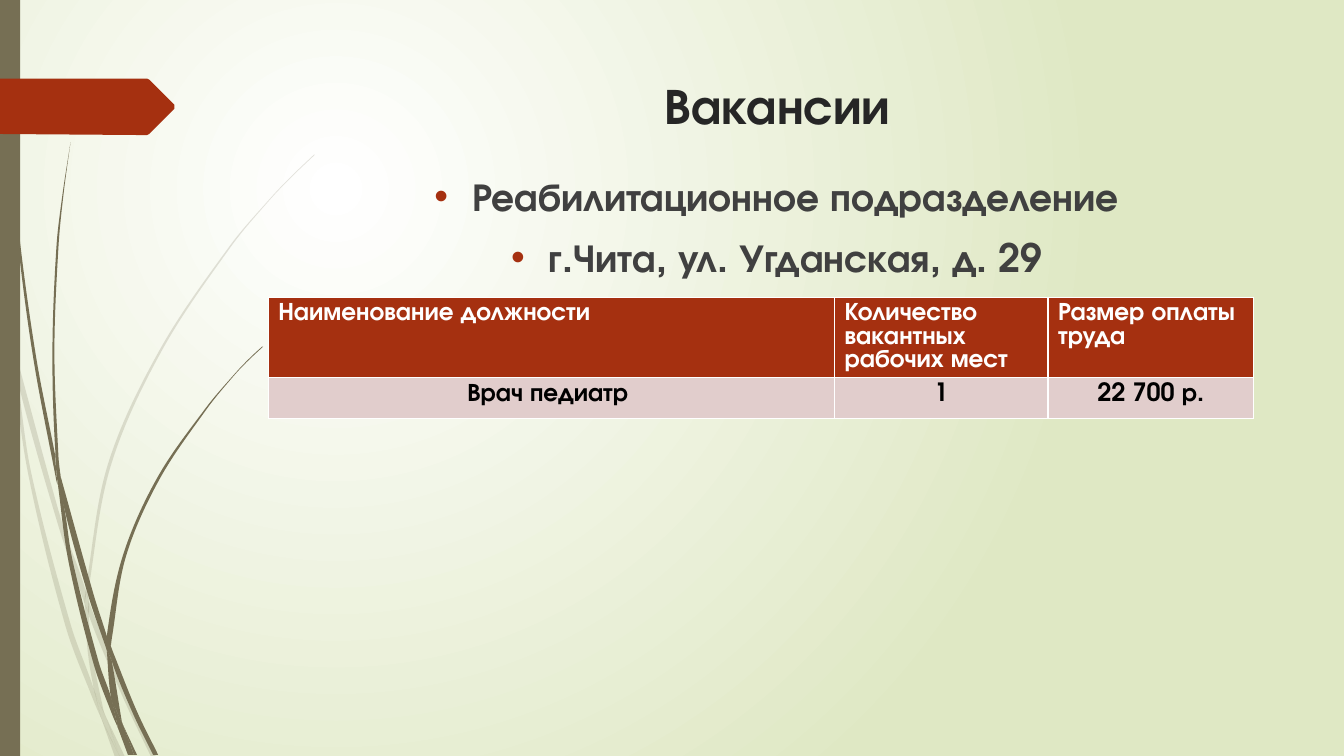
from math import hypot

from pptx import Presentation
from pptx.dml.color import RGBColor
from pptx.enum import shapes, text
from pptx.oxml import parse_xml
from pptx.oxml import ns
from pptx.util import Cm, Pt

FONT = "TeX Gyre Adventor"
COLORS = {
    "white": "FFFFFF", "pale_green": "DFE8C4", "olive": "766F54",
    "rust": "A53010", "title": "262626", "body": "404040",
    "black": "000000", "row": "E1CDCC",
}
STEP = Cm(0.0254)  # unit of the outline coordinates

ARROW = [(173, 108), (148, 133), (146, 134), (136, 134), (0, 133), (0, 78),
         (136, 78), (146, 78), (148, 79), (173, 104)]

# Anchors of the closed, curved outlines that make up the grass
FAINT_GRASS = [
    [(11, 350), (9, 322), (0, 282), (0, 299), (10, 344)],
    [(58, 522), (84, 599), (85, 586), (62, 520), (14, 345), (17, 376)],
    [(92, 607), (88, 596), (88, 610), (123, 694), (150, 751), (155, 751), (127, 692)],
    [(119, 751), (124, 751), (105, 711)],
    [(93, 683), (70, 619), (31, 469), (17, 376), (11, 350), (28, 470), (65, 621),
     (92, 693), (101, 714), (99, 707)],
    [(84, 599), (87, 646), (93, 683), (96, 692), (105, 711), (103, 706), (91, 646),
     (88, 610), (88, 608)],
    [(88, 584), (110, 462), (160, 349), (229, 245), (268, 198), (290, 175), (312, 154),
     (312, 153), (289, 175), (268, 197), (228, 244), (158, 348), (107, 461), (85, 584),
     (85, 586), (88, 596)],
    [(101, 714), (114, 751), (119, 751)],
    [(88, 608), (88, 610), (88, 596), (85, 586), (84, 599)],
    [(96, 692), (93, 683), (99, 707), (101, 714), (119, 751), (105, 711)],
]
DARK_GRASS = [
    [(7, 110), (17, 233), (33, 355), (56, 477), (57, 481), (55, 457), (55, 453),
     (36, 355), (19, 232), (8, 109), (5, 48), (4, 0), (3, 0), (4, 48)],
    [(88, 592), (106, 645), (106, 633), (106, 631), (93, 590), (60, 472), (64, 505)],
    [(113, 649), (110, 641), (111, 656), (132, 708), (152, 749), (157, 749), (136, 706)],
    [(110, 691), (98, 657), (72, 556), (64, 505), (57, 477), (68, 557), (93, 659),
     (111, 708), (117, 722), (116, 717)],
    [(60, 472), (58, 453), (54, 349), (58, 245), (63, 193), (70, 141), (62, 193),
     (56, 245), (52, 349), (55, 449)],
    [(133, 749), (136, 749), (122, 719)],
    [(57, 477), (64, 505), (60, 472), (55, 449), (55, 453)],
    [(111, 633), (125, 552), (158, 476), (205, 406), (231, 374), (245, 359), (261, 344),
     (260, 344), (245, 358), (231, 373), (204, 405), (156, 474), (122, 551), (106, 631),
     (110, 641)],
    [(117, 722), (127, 749), (131, 749)],
    [(106, 645), (110, 691), (116, 706), (122, 719), (121, 716), (111, 656), (109, 651)],
    [(106, 645), (109, 651), (111, 656), (110, 641), (106, 631), (106, 633)],
    [(116, 706), (110, 691), (116, 717), (117, 722), (130, 749), (133, 749), (122, 719)],
]


def rgb(name):
    return RGBColor.from_string(COLORS[name])


def direction(a, b):
    length = hypot(b[0] - a[0], b[1] - a[1])
    return (b[0] - a[0]) / length, (b[1] - a[1]) / length


def tangent(before, at, after, chord):
    """Smooth direction at an anchor, or the chord at a sharp corner."""
    (x1, y1), (x2, y2) = direction(before, at), direction(at, after)
    return direction(before, after) if x1 * x2 + y1 * y2 > 0.7 else chord


def bend(sp):
    """Turn the straight sides of a closed outline into curves."""
    sides = list(sp._element.iter(ns.qn("a:lnTo")))
    start = sp._element.find(".//" + ns.qn("a:moveTo"))
    anchors = [(int(e[0].get("x")), int(e[0].get("y"))) for e in [start] + sides]
    if anchors[-1] == anchors[0]:
        anchors.pop()
    n = len(anchors)
    for i, side in enumerate(sides):
        a, b, c, d = (anchors[(i + k) % n] for k in (-1, 0, 1, 2))
        chord = direction(b, c)
        reach = hypot(c[0] - b[0], c[1] - b[1]) / 3
        out, into = tangent(a, b, c, chord), tangent(b, c, d, chord)
        points = ((b[0] + out[0] * reach, b[1] + out[1] * reach),
                  (c[0] - into[0] * reach, c[1] - into[1] * reach), c)
        pts = "".join(f'<a:pt x="{round(x)}" y="{round(y)}"/>' for x, y in points)
        side.getparent().replace(side, parse_xml(
            f'<a:cubicBezTo {ns.nsdecls("a")}>{pts}</a:cubicBezTo>'))


def paint(sp, color):
    sp.shadow.inherit = False
    sp.fill.solid()
    sp.fill.fore_color.rgb = rgb(color)
    sp.line.fill.background()


def add_outline(s, anchors, color):
    points = [(x * STEP, y * STEP) for x, y in anchors]
    builder = s.shapes.build_freeform(*points[0])
    builder.add_line_segments(points[1:])
    sp = builder.convert_to_shape()
    paint(sp, color)
    return sp


def add_grass(s, outlines, opacity):
    for anchors in outlines:
        sp = add_outline(s, anchors + anchors[:1], "olive")
        bend(sp)
        if opacity < 100:
            color = sp._element.spPr.find(".//" + ns.qn("a:srgbClr"))
            color.append(parse_xml(
                f'<a:alpha {ns.nsdecls("a")} val="{opacity * 1000}"/>'))


def set_background(s):
    fill = s.background.fill
    fill.gradient()
    for stop, color, position in zip(fill.gradient_stops, ("white", "pale_green"), (0, 1)):
        stop.color.rgb = rgb(color)
        stop.position = position
    lin = s.background._cSld.find(".//" + ns.qn("a:lin"))
    lin.getparent().replace(lin, parse_xml(
        f'<a:path {ns.nsdecls("a")} path="circle">'
        '<a:fillToRect l="50000" t="50000" r="100000" b="100000"/></a:path>'))


def style(p, size, color, align):
    p.alignment = align
    p.font.name, p.font.size, p.font.bold = FONT, Pt(size), True
    p.font.color.rgb = rgb(color)


def fill_placeholder(sp, box, lines, size, color):
    sp.left, sp.top, sp.width, sp.height = box
    tf = sp.text_frame
    tf.text = "\n".join(lines)
    tf.word_wrap = True
    tf.auto_size = text.MSO_AUTO_SIZE.NONE
    tf.vertical_anchor = text.MSO_ANCHOR.TOP
    for p in tf.paragraphs:
        style(p, size, color, text.PP_ALIGN.CENTER)
    return tf


def add_bullet(p):
    p.space_before = Pt(10)
    pPr = p._p.get_or_add_pPr()
    pPr.set("marL", str(Cm(0.95)))
    pPr.set("indent", str(-Cm(0.95)))
    for xml in (f'<a:buClr {ns.nsdecls("a")}><a:srgbClr val="{COLORS["rust"]}"/></a:buClr>',
                f'<a:buFont {ns.nsdecls("a")} typeface="Arial"/>',
                f'<a:buChar {ns.nsdecls("a")} char="•"/>'):
        pPr.insert_element_before(parse_xml(xml), "a:tabLst", "a:defRPr", "a:extLst")


def format_cell(cell, value, fill, color, align):
    cell.text = value
    cell.fill.solid()
    cell.fill.fore_color.rgb = rgb(fill)
    style(cell.text_frame.paragraphs[0], 18, color, align)
    tcPr = cell._tc.get_or_add_tcPr()
    for i, side in enumerate(("lnL", "lnR", "lnT", "lnB")):
        tcPr.insert(i, parse_xml(
            f'<a:{side} {ns.nsdecls("a")} w="{Pt(1)}"><a:solidFill>'
            f'<a:srgbClr val="{COLORS["white"]}"/></a:solidFill></a:{side}>'))


def add_vacancies(s, rows, widths, heights):
    table = s.shapes.add_table(len(rows), len(widths), Cm(6.76), Cm(7.49),
                               Cm(sum(widths)), Cm(sum(heights))).table
    for column, width in zip(table.columns, widths):
        column.width = Cm(width)
    for i, (row, values) in enumerate(zip(table.rows, rows)):
        row.height = Cm(heights[i])
        look = (("row", "black", text.PP_ALIGN.CENTER) if i
                else ("rust", "white", text.PP_ALIGN.LEFT))
        for cell, value in zip(row.cells, values):
            format_cell(cell, value, *look)


def main():
    prs = Presentation()
    prs.slide_width, prs.slide_height = Cm(33.87), Cm(19.05)
    s = prs.slides.add_slide(prs.slide_layouts[1])
    set_background(s)

    # Grass, side bar and arrow
    add_grass(s, FAINT_GRASS, 20)
    add_grass(s, DARK_GRASS, 100)
    bar = s.shapes.add_shape(shapes.MSO_SHAPE.RECTANGLE, 0, 0, Cm(0.51), prs.slide_height)
    paint(bar, "olive")
    add_outline(s, ARROW, "rust")

    # Title and address
    fill_placeholder(s.shapes.title, (Cm(7.21), Cm(1.73), Cm(24.77), Cm(4.39)),
                     ["Вакансии"], 36, "title")
    tf = fill_placeholder(s.placeholders[1], (Cm(7.19), Cm(4.22), Cm(24.77), Cm(12.22)),
                          ["Реабилитационное подразделение",
                           "г.Чита, ул. Угданская, д. 29"], 28, "body")
    for p in tf.paragraphs:
        add_bullet(p)

    # Vacancies
    add_vacancies(s, [
        ("Наименование должности", "Количество вакантных рабочих мест",
         "Размер оплаты труда"),
        ("Врач педиатр ", "1", "22 700 р."),
    ], widths=(14.27, 5.38, 5.18), heights=(2.01, 1.04))

    prs.save("out.pptx")


if __name__ == "__main__":
    main()
